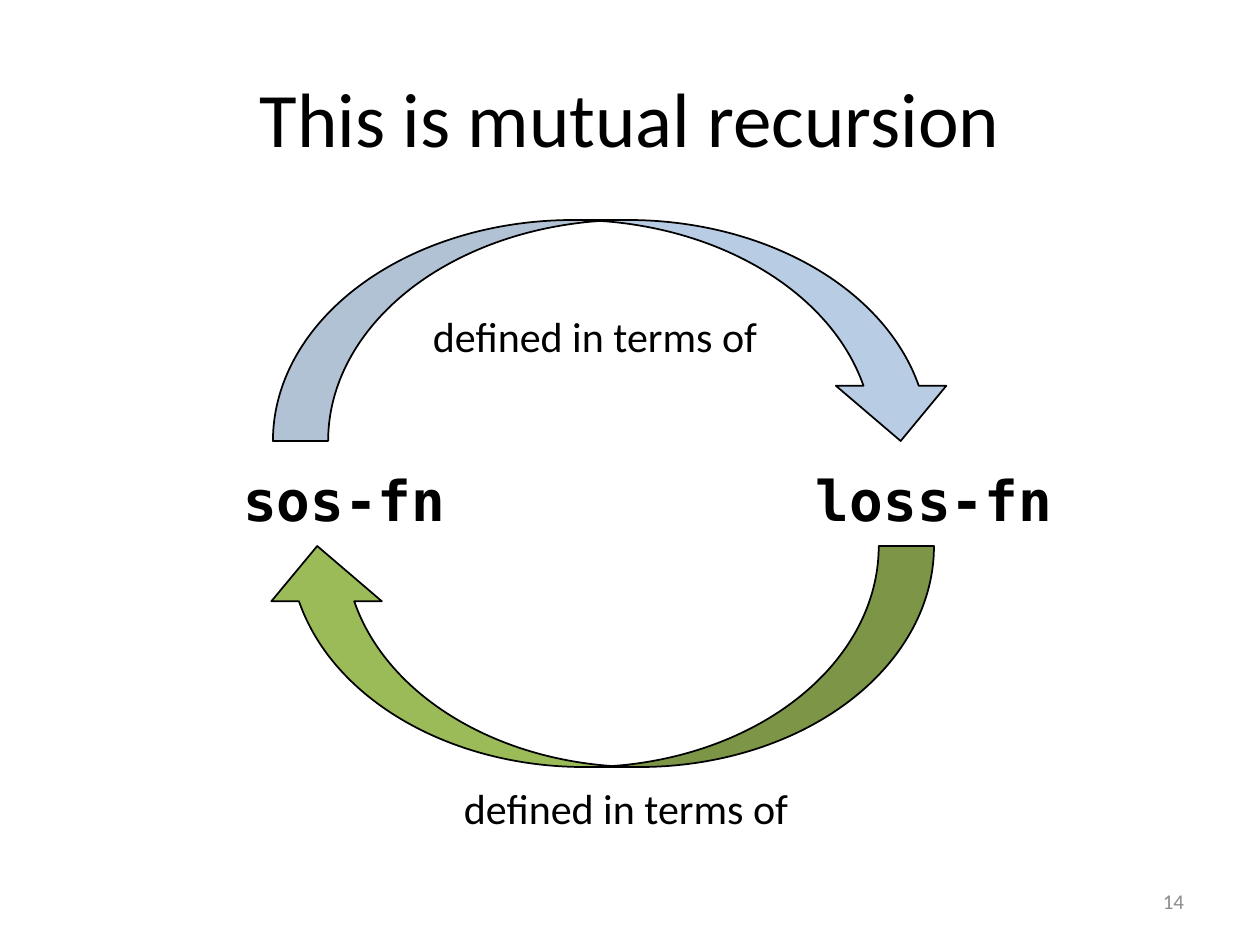
"""Build a slide showing two functions that are defined in terms of each other."""
from dataclasses import dataclass

from lxml import etree
from pptx import Presentation
from pptx.dml.color import RGBColor
from pptx.enum.shapes import MSO_SHAPE
from pptx.enum.text import MSO_ANCHOR, PP_ALIGN
from pptx.oxml.ns import qn
from pptx.util import Emu, Pt

LEFT, CENTER, RIGHT = PP_ALIGN.LEFT, PP_ALIGN.CENTER, PP_ALIGN.RIGHT
TOP, MIDDLE = MSO_ANCHOR.TOP, MSO_ANCHOR.MIDDLE
CURVED_ARROW = MSO_SHAPE.CURVED_DOWN_ARROW
EMU_PER_PX = 914400 / 126


@dataclass(frozen=True)
class Theme:
    black: str = "000000"
    gray: str = "8C8C8C"
    blue: str = "4F81BD"
    green: str = "9BBB59"
    body_font: str = "Calibri"
    code_font: str = "DejaVu Sans Mono"
    title_size: int = 44
    code_size: int = 32
    label_size: int = 24
    number_size: int = 12
    line_width: int = 1
    inset: tuple = (13, 6)


THEME = Theme()
SLIDE_SIZE = (1260, 945)
TITLE = ("This is mutual recursion", (63, 38, 1134, 158))
FUNCTIONS = [("sos-fn", (243, 466, 220, 66)), ("loss-fn", (816, 466, 250, 66))]
RELATION = "defined in terms of"
RELATION_BOXES = [(420, 305, 378, 63), (451, 777, 378, 63)]
ARROWS = [
    ((273, 220, 683, 221), THEME.blue, 40, 0),
    ((262, 546, 672, 221), THEME.green, 100, 180),
]
SLIDE_NUMBER = ("14", (903, 876, 294, 50))


def px(value):
    return Emu(round(value * EMU_PER_PX))


def add_text(slide, text, box, size, font=THEME.body_font, color=THEME.black,
             align=LEFT, anchor=TOP, bold=False, inset=THEME.inset):
    frame = slide.shapes.add_textbox(*map(px, box)).text_frame
    frame.word_wrap = True
    frame.vertical_anchor = anchor
    frame.margin_left = frame.margin_right = px(inset[0])
    frame.margin_top = frame.margin_bottom = px(inset[1])
    frame.text = text
    paragraph = frame.paragraphs[0]
    paragraph.alignment = align
    run_font = paragraph.runs[0].font
    run_font.name, run_font.size, run_font.bold = font, Pt(size), bold
    run_font.color.rgb = RGBColor.from_string(color)


def add_arrow(slide, box, color, opacity, rotation):
    shape = slide.shapes.add_shape(CURVED_ARROW, *map(px, box))
    shape.shadow.inherit = False
    shape.rotation = rotation
    shape.fill.solid()
    shape.fill.fore_color.rgb = RGBColor.from_string(color)
    if opacity < 100:
        fill_color = shape.element.spPr.find(qn("a:solidFill")).find(qn("a:srgbClr"))
        etree.SubElement(fill_color, qn("a:alpha"), val=str(opacity * 1000))
    shape.line.color.rgb = RGBColor.from_string(THEME.black)
    shape.line.width = Pt(THEME.line_width)


def main():
    presentation = Presentation()
    presentation.slide_width, presentation.slide_height = map(px, SLIDE_SIZE)
    slide = presentation.slides.add_slide(presentation.slide_layouts[6])
    add_text(slide, *TITLE, THEME.title_size, align=CENTER, anchor=MIDDLE)
    for name, box in FUNCTIONS:
        add_text(slide, name, box, THEME.code_size, THEME.code_font,
                 bold=True, inset=(0, 0))
    for arrow in ARROWS:
        add_arrow(slide, *arrow)
    for box in RELATION_BOXES:
        add_text(slide, RELATION, box, THEME.label_size)
    add_text(slide, *SLIDE_NUMBER, THEME.number_size, color=THEME.gray,
             align=RIGHT, anchor=MIDDLE)
    presentation.save("out.pptx")


if __name__ == "__main__":
    main()
